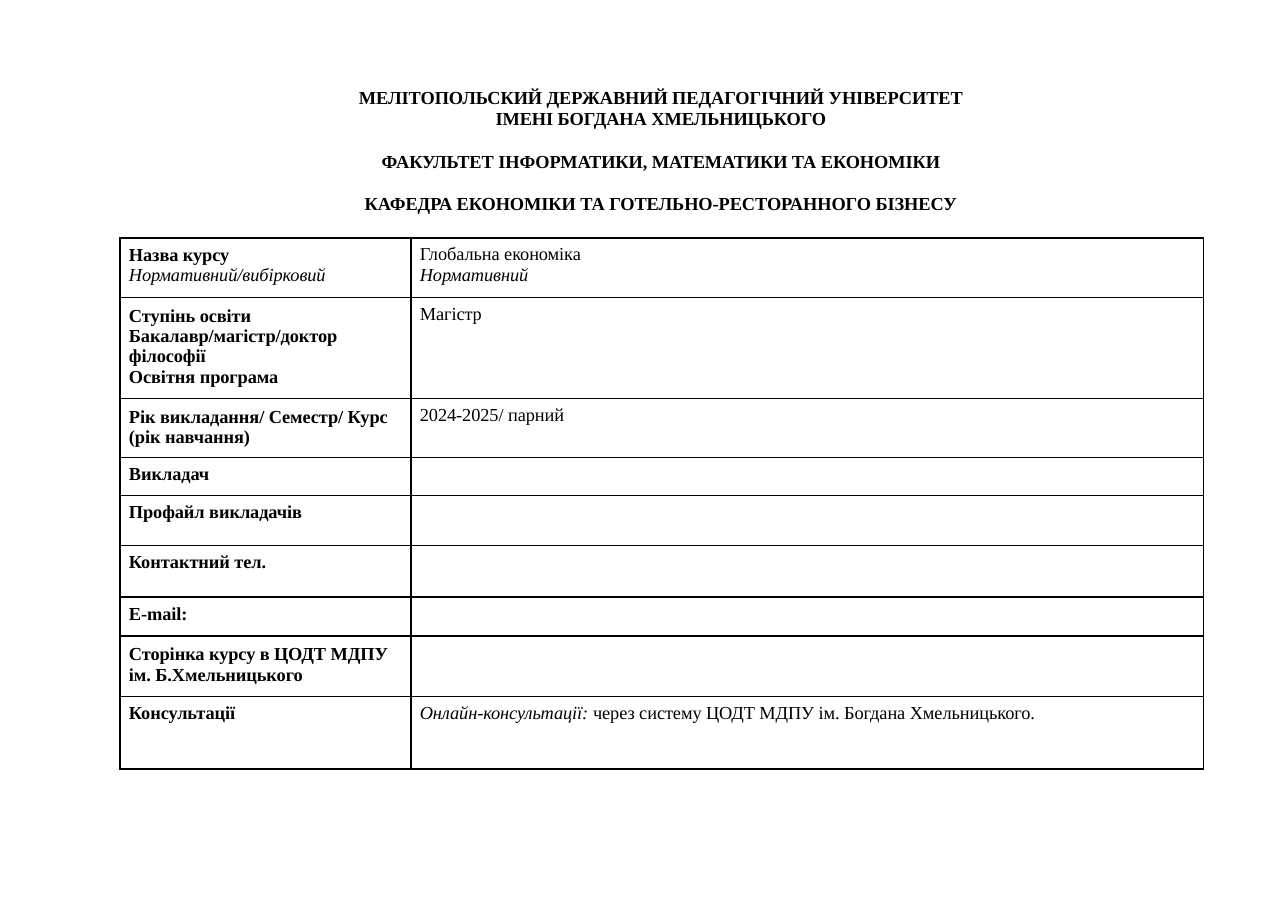
from dataclasses import dataclass
from typing import NamedTuple

from lxml.etree import SubElement
from pptx import Presentation
from pptx.dml.color import RGBColor
from pptx.enum.text import MSO_ANCHOR as Anchor, MSO_AUTO_SIZE as AutoSize, PP_ALIGN as Align
from pptx.oxml.ns import qn
from pptx.util import Pt


@dataclass(frozen=True)
class Theme:
    font: str = "Times New Roman"
    size: float = 12
    tracking: int = -5
    ink: RGBColor = RGBColor(0, 0, 0)
    paper: RGBColor = RGBColor(255, 255, 255)
    border: float = 1


class TextRun(NamedTuple):
    text: str
    bold: bool = False
    italic: bool = False


class CourseRow(NamedTuple):
    height: float
    label: list[list[TextRun]]
    value: list[list[TextRun]]
    label_top: float = 4.5


THEME = Theme()
VALUE_TOP = 4.3
CELL_INDENT = 5.8
COLUMN_WIDTHS = (190.1, 517.7)


def strong(text: str) -> list[TextRun]:
    return [TextRun(text, bold=True)]


def plain(text: str) -> list[TextRun]:
    return [TextRun(text)]


def slanted(text: str) -> list[TextRun]:
    return [TextRun(text, italic=True)]


HEADING = [
    strong("МЕЛІТОПОЛЬСКИЙ ДЕРЖАВНИЙ ПЕДАГОГІЧНИЙ УНІВЕРСИТЕТ ІМЕНІ БОГДАНА ХМЕЛЬНИЦЬКОГО"),
    strong("ФАКУЛЬТЕТ ІНФОРМАТИКИ, МАТЕМАТИКИ ТА ЕКОНОМІКИ "
           "КАФЕДРА ЕКОНОМІКИ ТА ГОТЕЛЬНО-РЕСТОРАННОГО БІЗНЕСУ"),
]

COURSE_ROWS = [
    CourseRow(38.9, [strong("Назва курсу"), slanted("Нормативний/вибірковий")],
              [plain("Глобальна економіка"), slanted("Нормативний")]),
    CourseRow(66.2, [strong("Ступінь освіти Бакалавр/магістр/доктор філософії"),
                     strong("Освітня програма")],
              [plain("Магістр")], 5.5),
    CourseRow(38.5, [strong("Рік викладання/ Семестр/ Курс (рік навчання)")],
              [plain("2024-2025/ парний")], 5.5),
    CourseRow(24.9, [strong("Викладач")], []),
    CourseRow(32.6, [strong("Профайл викладачів")], []),
    CourseRow(33.7, [strong("Контактний тел.")], []),
    CourseRow(25.4, [strong("E-mail:")], []),
    CourseRow(39.5, [strong("Сторінка курсу в ЦОДТ МДПУ ім. Б.Хмельницького")], [], 5.5),
    CourseRow(47.5, [strong("Консультації")],
              [slanted("Онлайн-консультації: ")
               + plain("через систему ЦОДТ МДПУ ім. Богдана Хмельницького.")]),
]


def write_paragraphs(text_frame, paragraphs: list[list[TextRun]], alignment: Align) -> None:
    for index, text_runs in enumerate(paragraphs):
        paragraph = text_frame.paragraphs[0] if index == 0 else text_frame.add_paragraph()
        paragraph.alignment = alignment
        for text_run in text_runs:
            run = paragraph.add_run()
            run.text = text_run.text
            run.font.name = THEME.font
            run.font.size = Pt(THEME.size)
            run.font.bold = text_run.bold
            run.font.italic = text_run.italic
            run.font.color.rgb = THEME.ink
            run.font._element.set("spc", str(THEME.tracking))


def draw_borders(cell) -> None:
    properties = cell._tc.get_or_add_tcPr()
    for side in ("a:lnL", "a:lnR", "a:lnT", "a:lnB"):
        line = SubElement(properties, qn(side), w=str(Pt(THEME.border)))
        fill = SubElement(line, qn("a:solidFill"))
        SubElement(fill, qn("a:srgbClr"), val=str(THEME.ink))


def fill_cell(cell, paragraphs: list[list[TextRun]], top: float) -> None:
    cell.margin_left, cell.margin_top = Pt(CELL_INDENT), Pt(top if paragraphs else 0)
    cell.margin_right = cell.margin_bottom = Pt(0)
    cell.vertical_anchor = Anchor.TOP
    draw_borders(cell)
    cell.fill.solid()
    cell.fill.fore_color.rgb = THEME.paper
    write_paragraphs(cell.text_frame, paragraphs, Align.LEFT)


def add_heading(slide) -> None:
    title = slide.shapes.title
    title.left, title.top, title.width, title.height = Pt(230.5), Pt(54.7), Pt(403), Pt(85.7)
    text_frame = title.text_frame
    text_frame.word_wrap = True
    text_frame.auto_size = AutoSize.NONE
    text_frame.vertical_anchor = Anchor.TOP
    text_frame.margin_left = text_frame.margin_right = text_frame.margin_bottom = Pt(0)
    text_frame.margin_top = Pt(1.9)
    write_paragraphs(text_frame, HEADING, Align.CENTER)
    university, department = text_frame.paragraphs
    university.space_before, university.line_spacing = Pt(0), Pt(13.8)
    department.space_before, department.line_spacing = Pt(0.8), Pt(27.6)


def add_course_table(slide) -> None:
    height = sum(row.height for row in COURSE_ROWS)
    table = slide.shapes.add_table(len(COURSE_ROWS), len(COLUMN_WIDTHS), Pt(78.5), Pt(155.5),
                                   Pt(sum(COLUMN_WIDTHS)), Pt(height)).table
    table.first_row = table.horz_banding = False
    for column, width in zip(table.columns, COLUMN_WIDTHS):
        column.width = Pt(width)
    for table_row, course_row in zip(table.rows, COURSE_ROWS):
        table_row.height = Pt(course_row.height)
        label_cell, value_cell = table_row.cells
        fill_cell(label_cell, course_row.label, course_row.label_top)
        fill_cell(value_cell, course_row.value, VALUE_TOP)


def main() -> None:
    presentation = Presentation()
    presentation.slide_width, presentation.slide_height = Pt(841.68), Pt(595.44)
    slide = presentation.slides.add_slide(presentation.slide_layouts[5])
    add_heading(slide)
    add_course_table(slide)
    presentation.save("out.pptx")


if __name__ == "__main__":
    main()
